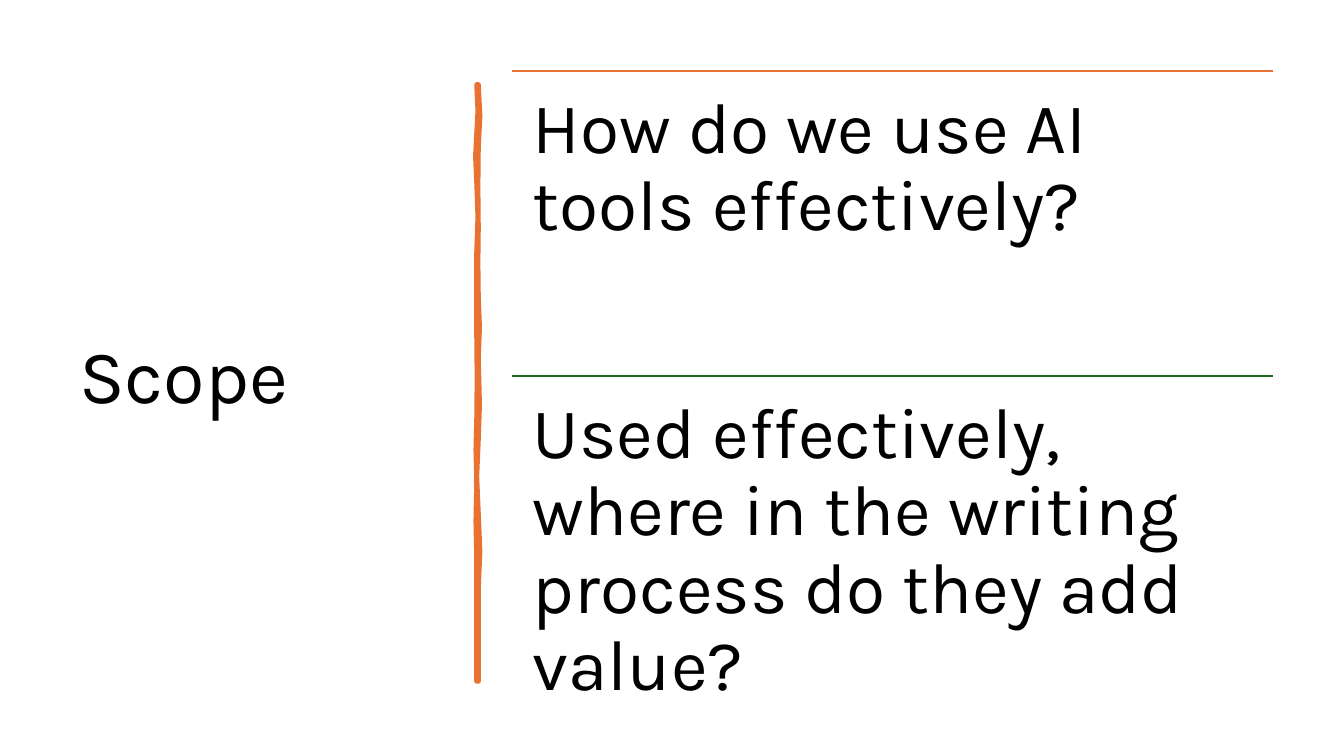
from pptx import Presentation
from pptx.dml.color import RGBColor
from pptx.enum.shapes import MSO_CONNECTOR as Link
from pptx.enum.text import MSO_ANCHOR as Anchor
from pptx.oxml.ns import qn
from pptx.util import Cm, Pt
from lxml.etree import SubElement


def color(text):
    return RGBColor.from_string(text)


def add_text(text, left, top, width, height, size, pad):
    box = slide.shapes.add_textbox(Cm(left), Cm(top), Cm(width), Cm(height))
    frame = box.text_frame
    frame.word_wrap = True
    frame.margin_left = frame.margin_right = Cm(pad[0])
    frame.margin_top = frame.margin_bottom = Cm(pad[1])
    frame.text = text
    para = frame.paragraphs[0]
    para.line_spacing = 0.9
    font = para.runs[0].font
    font.name = "Karla"
    font.size = Pt(size)
    font.color.rgb = color("000000")
    return frame


ORANGE, GREEN = "E97132", "196B24"

deck = Presentation()
deck.slide_width, deck.slide_height = Cm(33.87), Cm(19.05)
slide = deck.slides.add_slide(deck.slide_layouts[6])

# Title
title = add_text("Scope", 1.75, 1.78, 9.5, 15.52, 54, (0.25, 0.13))
title.vertical_anchor = Anchor.MIDDLE

# Hand-drawn divider: down the right edge, back up the left one
right = [(12.06, 2.13), (12.1, 2.92), (12.06, 3.71), (12.05, 4.72),
         (12.06, 5.74), (12.05, 6.6), (12.06, 7.47), (12.09, 8.26),
         (12.06, 9.04), (12.09, 10.2), (12.06, 11.07), (12.02, 12.01),
         (12.06, 12.95), (12.1, 13.89), (12.06, 14.83), (12.06, 17.17)]
left = [(12.01, 17.17), (12.01, 15.57), (12.01, 14.15), (11.99, 13.13),
        (12.01, 12.12), (11.99, 11.33), (12.01, 10.54), (12.02, 9.53),
        (12.01, 8.51), (12.01, 6.35), (12.04, 5.46), (12.01, 4.6),
        (11.98, 3.94), (12.04, 2.79), (12.01, 2.13)]
edge = [(Cm(x), Cm(y)) for x, y in right + left]
pen = slide.shapes.build_freeform(*edge[0])
pen.add_line_segments(edge[1:], close=True)
bar = pen.convert_to_shape()
bar.shadow.inherit = False
bar.fill.solid()
bar.fill.fore_color.rgb = color(ORANGE)
bar.line.color.rgb = color(ORANGE)
bar.line.width = Pt(3.25)

# Questions, each under its rule
items = [
    (ORANGE, "How do we use AI tools effectively?"),
    (GREEN, "Used effectively, where in the writing process do they add value?"),
]
x, y, wide, high = 12.9, 1.78, 19.18, 7.7
for i, (tint, text) in enumerate(items):
    top = y + i * high
    rule = slide.shapes.add_connector(
        Link.STRAIGHT, Cm(x), Cm(top), Cm(x + wide), Cm(top))
    rule.line.color.rgb = color(tint)
    rule.line.width = Pt(1.5)
    SubElement(rule._element.spPr, qn("a:effectLst"))
    add_text(text, x, top, wide, high, 51, (0.53, 0.53))

deck.save("out.pptx")
